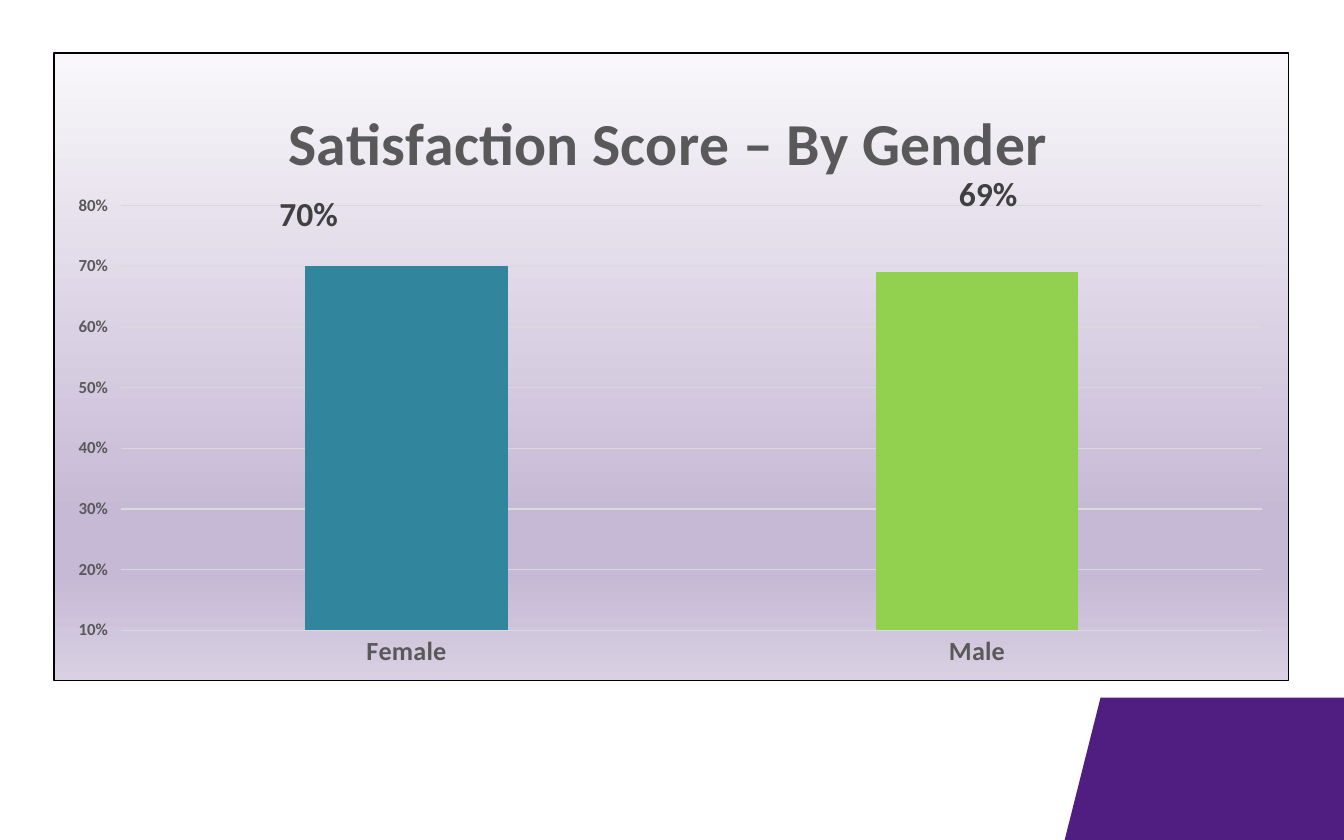
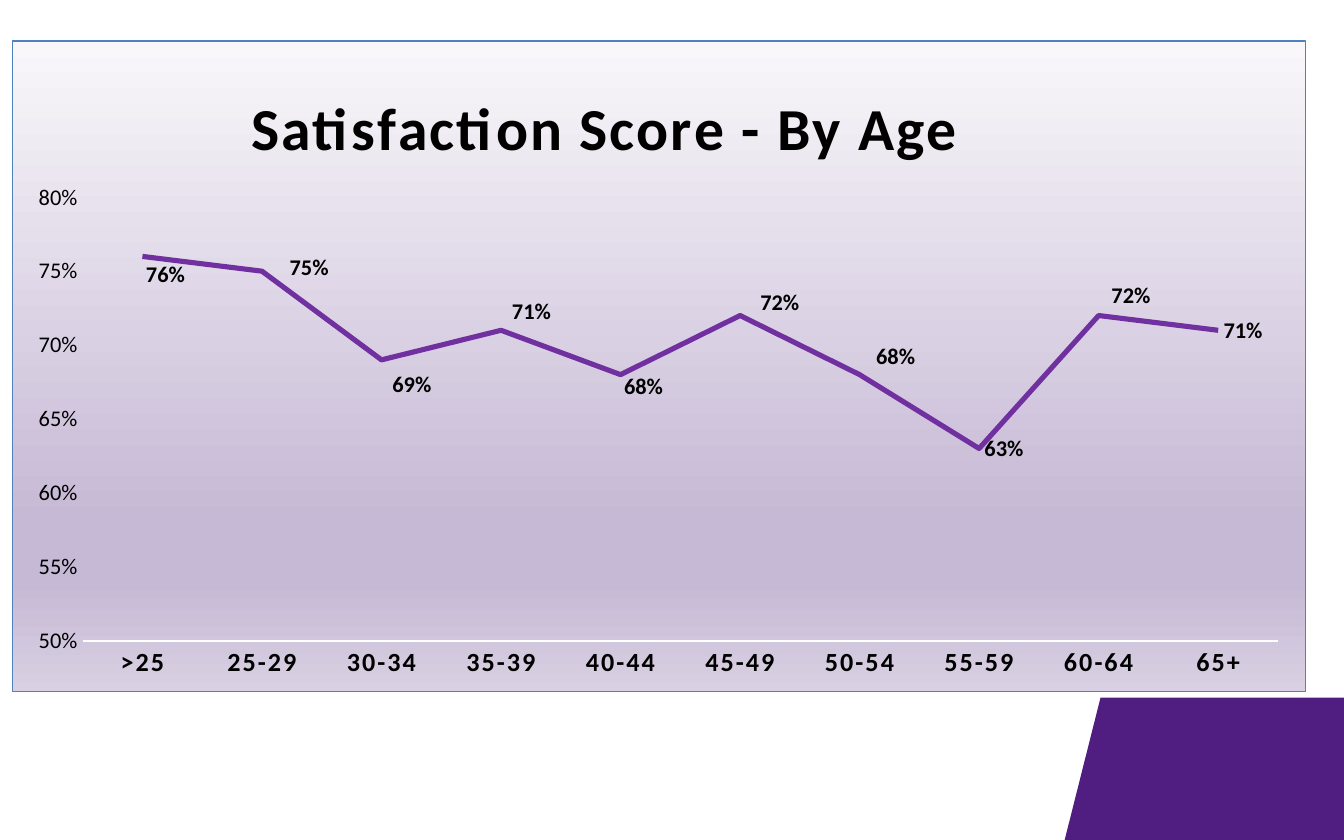
from dataclasses import dataclass
from typing import Any

from lxml import etree
from pptx import Presentation
from pptx.chart.chart import Chart
from pptx.chart.data import CategoryChartData
from pptx.dml.color import RGBColor
from pptx.enum.chart import XL_CHART_TYPE, XL_LABEL_POSITION, XL_TICK_MARK
from pptx.oxml import parse_xml
from pptx.oxml.ns import nsdecls, qn
from pptx.util import Pt

COLUMN, LINE = XL_CHART_TYPE.COLUMN_CLUSTERED, XL_CHART_TYPE.LINE
ABOVE_BAR, RIGHT = XL_LABEL_POSITION.OUTSIDE_END, XL_LABEL_POSITION.RIGHT
NO_TICK, OUTER_TICK = XL_TICK_MARK.NONE, XL_TICK_MARK.OUTSIDE

BLACK = RGBColor(0x00, 0x00, 0x00)
WHITE = RGBColor(0xFF, 0xFF, 0xFF)
DARK_GREY = RGBColor(0x40, 0x40, 0x40)
GREY = RGBColor(0x59, 0x59, 0x59)
LIGHT_GREY = RGBColor(0xD9, 0xD9, 0xD9)
BLUE = RGBColor(0x4F, 0x81, 0xBD)
TEAL = RGBColor(0x31, 0x85, 0x9C)
GREEN = RGBColor(0x92, 0xD0, 0x50)
PURPLE = RGBColor(0x70, 0x30, 0xA0)
BAND_PURPLE = RGBColor(0x4F, 0x1E, 0x80)
PANEL_STOPS = (
    (0, RGBColor(0xF9, 0xF7, 0xFA)),
    (74, RGBColor(0xC6, 0xB9, 0xD5)),
    (83, RGBColor(0xC6, 0xB9, 0xD5)),
    (100, RGBColor(0xD9, 0xD0, 0xE3)),
)

FONT = "Calibri"
PERCENT = "0%"
SLIDE_WIDTH, SLIDE_HEIGHT = 720, 450
BAND_POINTS = ((589.6, 373.8), (SLIDE_WIDTH, 373.8),
               (SLIDE_WIDTH, SLIDE_HEIGHT), (570.4, SLIDE_HEIGHT))


@dataclass(frozen=True)
class TextStyle:
    size: float
    color: RGBColor
    bold: bool = True
    spacing: int = 0  # hundredths of a point


@dataclass(frozen=True)
class ScoreChart:
    """One chart panel; lengths are points, plot and title lie inside the panel."""
    kind: XL_CHART_TYPE
    title: str
    scores: dict[str, float]
    frame: tuple[float, float, float, float]
    plot: tuple[float, float, float, float]
    title_at: tuple[float, float]
    border: RGBColor
    axis_line: tuple[RGBColor, float]
    title_style: TextStyle
    category_style: TextStyle
    value_style: TextStyle
    label_style: TextStyle
    label_position: XL_LABEL_POSITION
    label_shifts: dict[int, tuple[float, float]]
    value_axis: dict[str, Any]
    leader_lines: bool


GENDER = ScoreChart(
    kind=COLUMN,
    title="Satisfaction Score – By Gender",
    scores={"Female": 0.70, "Male": 0.69},
    frame=(28.6, 28, 662, 337),
    plot=(36, 82, 612, 228),
    title_at=(120, 20),
    border=BLACK,
    axis_line=(LIGHT_GREY, 0.75),
    title_style=TextStyle(32, GREY),
    category_style=TextStyle(14, GREY),
    value_style=TextStyle(9, GREY),
    label_style=TextStyle(18, DARK_GREY),
    label_position=ABOVE_BAR,
    label_shifts={0: (-52.5, -14), 1: (6, -28)},
    value_axis={"minimum_scale": 0.1, "maximum_scale": 0.8,
                "has_major_gridlines": True, "major_tick_mark": OUTER_TICK},
    leader_lines=True,
)
AGE = ScoreChart(
    kind=LINE,
    title="Satisfaction Score - By Age",
    scores={">25": 0.76, "25-29": 0.75, "30-34": 0.69, "35-39": 0.71, "40-44": 0.68,
            "45-49": 0.72, "50-54": 0.68, "55-59": 0.63, "60-64": 0.72, "65+": 0.71},
    frame=(6.5, 21.6, 693.2, 349.2),
    plot=(37.5, 84, 641, 238),
    title_at=(122, 18.5),
    border=BLUE,
    axis_line=(WHITE, 1),
    title_style=TextStyle(32, BLACK, spacing=100),
    category_style=TextStyle(14, BLACK, spacing=100),
    value_style=TextStyle(12, BLACK, bold=False),
    label_style=TextStyle(12, BLACK),
    label_position=RIGHT,
    label_shifts={0: (-1, 10), 1: (12, -2), 2: (3, 13.5), 3: (3, -10), 4: (-1, 6.5),
                  5: (8, -7), 6: (6, -9.5), 8: (4, -10.5)},
    value_axis={"minimum_scale": 0.5, "has_major_gridlines": False,
                "major_tick_mark": NO_TICK},
    leader_lines=False,
)


def set_all(target: Any, values: dict[str, Any]) -> None:
    for name, value in values.items():
        setattr(target, name, value)


def style_font(font: Any, style: TextStyle) -> None:
    set_all(font, {"name": FONT, "size": Pt(style.size), "bold": style.bold})
    font.color.rgb = style.color


def style_line(line: Any, color: RGBColor, width: float) -> None:
    line.color.rgb = color
    line.width = Pt(width)


def manual_layout(panel: ScoreChart, place: tuple[float, ...],
                  inner: bool = False) -> etree.ElementBase:
    """Turn points inside the panel into a layout of chart fractions."""
    width, height = panel.frame[2:]
    target = '<c:layoutTarget val="inner"/>' if inner else ""
    modes = '<c:xMode val="edge"/><c:yMode val="edge"/>'
    fractions = "".join(
        f'<c:{name} val="{length / whole:.4f}"/>'
        for name, length, whole in zip("xywh", place, (width, height) * 2))
    return parse_xml(f'<c:layout {nsdecls("c")}><c:manualLayout>{target}{modes}'
                     f'{fractions}</c:manualLayout></c:layout>')


def shift_layout(panel: ScoreChart, shift: tuple[float, float]) -> etree.ElementBase:
    """Layout that moves a label from its usual place."""
    layout = manual_layout(panel, shift)
    for mode in ("c:xMode", "c:yMode"):
        layout[0].remove(layout[0].find(qn(mode)))
    return layout


def drop_layout(parent: etree.ElementBase) -> None:
    for layout in parent.findall(qn("c:layout")):
        parent.remove(layout)


def fill_panel(chart: Chart, border: RGBColor) -> None:
    stops = "".join(f'<a:gs pos="{percent * 1000}"><a:srgbClr val="{color}"/></a:gs>'
                    for percent, color in PANEL_STOPS)
    chart.element.find(qn("c:chart")).addnext(parse_xml(
        f'<c:spPr {nsdecls("c", "a")}><a:gradFill><a:gsLst>{stops}</a:gsLst>'
        f'<a:lin ang="5400000" scaled="0"/></a:gradFill><a:ln w="{Pt(0.75)}">'
        f'<a:solidFill><a:srgbClr val="{border}"/></a:solidFill></a:ln></c:spPr>'))


def add_title(chart: Chart, panel: ScoreChart) -> None:
    para = chart.chart_title.text_frame.paragraphs[0]
    span = para.add_run()
    span.text = panel.title
    style_font(span.font, panel.title_style)
    span.font._element.set("spc", str(panel.title_style.spacing))
    title = chart.element.find(".//" + qn("c:title"))
    drop_layout(title)
    title.find(qn("c:tx")).addnext(manual_layout(panel, panel.title_at))


def style_axes(chart: Chart, panel: ScoreChart) -> None:
    categories, values = chart.category_axis, chart.value_axis
    set_all(categories, {"major_tick_mark": NO_TICK, "has_major_gridlines": False})
    style_font(categories.tick_labels.font, panel.category_style)
    properties = chart.element.find(f".//{qn('c:catAx')}/{qn('c:txPr')}//{qn('a:defRPr')}")
    properties.set("spc", str(panel.category_style.spacing))
    style_line(categories.format.line, *panel.axis_line)

    set_all(values, panel.value_axis)
    set_all(values.tick_labels, {"number_format": PERCENT, "number_format_is_linked": False})
    style_font(values.tick_labels.font, panel.value_style)
    values.format.line.fill.background()
    if values.has_major_gridlines:
        style_line(values.major_gridlines.format.line, LIGHT_GREY, 0.75)


def add_labels(chart: Chart, panel: ScoreChart) -> None:
    series = chart.plots[0].series[0]
    labels = series.data_labels
    set_all(labels, {"show_value": True, "number_format": PERCENT,
                     "number_format_is_linked": False, "position": panel.label_position})
    style_font(labels.font, panel.label_style)
    for index in panel.label_shifts:
        label = series.points[index].data_label
        style_font(label.font, panel.label_style)
        label.position = panel.label_position
    moved = chart.element.iter(qn("c:dLbl"))
    for label, shift in zip(list(moved), panel.label_shifts.values()):
        label.find(qn("c:idx")).addnext(shift_layout(panel, shift))

    group = chart.element.find(f".//{qn('c:ser')}/{qn('c:dLbls')}")
    for leader in group.findall(qn("c:showLeaderLines")):
        leader.set("val", "0")
    group.append(parse_xml(
        f'<c:extLst {nsdecls("c")}><c:ext uri="{{CE6537A1-D6FC-4f65-9D91-7224C49458BB}}" '
        'xmlns:c15="http://schemas.microsoft.com/office/drawing/2012/chart">'
        f'<c15:showLeaderLines val="{int(panel.leader_lines)}"/></c:ext></c:extLst>'))


def add_score_chart(page: Any, panel: ScoreChart) -> Chart:
    data = CategoryChartData(number_format=PERCENT)
    data.categories = list(panel.scores)
    data.add_series("Series 1", list(panel.scores.values()))
    box = page.shapes.add_chart(panel.kind, *map(Pt, panel.frame), data)
    chart = box.chart
    set_all(chart, {"has_legend": False, "has_title": True})
    style_font(chart.font, TextStyle(10, BLACK, bold=False))
    chart.plots[0].vary_by_categories = False
    fill_panel(chart, panel.border)
    add_title(chart, panel)
    style_axes(chart, panel)
    add_labels(chart, panel)
    plot_area = chart.element.find(".//" + qn("c:plotArea"))
    drop_layout(plot_area)
    plot_area.insert(0, manual_layout(panel, panel.plot, inner=True))
    return chart


def color_columns(chart: Chart) -> None:
    chart.plots[0].gap_width = 182
    series = chart.plots[0].series[0]
    parts = (series, series.points[0], series.points[1])
    for part, color in zip(parts, (GREEN, TEAL, GREEN)):
        part.format.fill.solid()
        part.format.fill.fore_color.rgb = color


def color_line(chart: Chart) -> None:
    series = chart.plots[0].series[0]
    series.smooth = False
    style_line(series.format.line, PURPLE, 2.75)


def add_corner_band(page: Any) -> None:
    """Draw the corner band and hand it to the layout that all slides share."""
    layout = page.slide_layout
    for placeholder in list(layout.placeholders):
        layout.shapes.element.remove(placeholder.element)
    corners = [(Pt(x), Pt(y)) for x, y in BAND_POINTS]
    builder = page.shapes.build_freeform(*corners[0])
    builder.add_line_segments(corners[1:], close=True)
    band = builder.convert_to_shape()
    band.shadow.inherit = False
    band.fill.solid()
    band.fill.fore_color.rgb = BAND_PURPLE
    band.line.fill.background()
    layout.shapes.element.append(band.element)


def main() -> None:
    deck = Presentation()
    set_all(deck, {"slide_width": Pt(SLIDE_WIDTH), "slide_height": Pt(SLIDE_HEIGHT)})
    blank = deck.slide_layouts[6]
    gender_page, age_page = (deck.slides.add_slide(blank) for _ in range(2))
    add_corner_band(gender_page)
    color_columns(add_score_chart(gender_page, GENDER))
    color_line(add_score_chart(age_page, AGE))
    deck.save("out.pptx")


if __name__ == "__main__":
    main()
